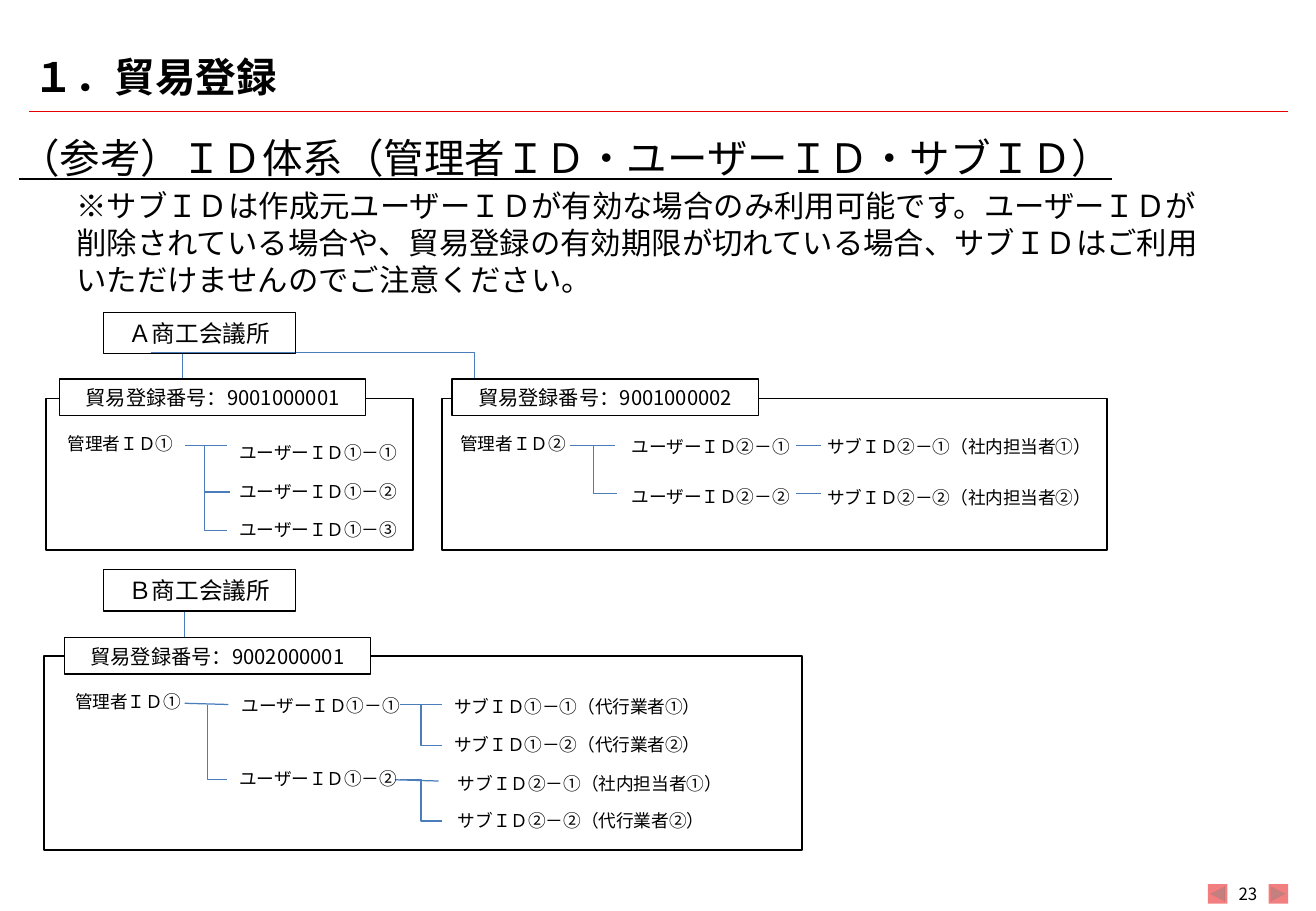
"""Builds the slide on the ID structure of trade registration."""
import lxml.etree
import pptx
import pptx.dml.color
import pptx.enum.shapes
import pptx.enum.text
import pptx.oxml.ns
import pptx.util
from pptx.util import Inches

BLACK = pptx.dml.color.RGBColor(0x00, 0x00, 0x00)
WHITE = pptx.dml.color.RGBColor(0xFF, 0xFF, 0xFF)
RED = pptx.dml.color.RGBColor(0xE6, 0x00, 0x00)
BLUE = pptx.dml.color.RGBColor(0x4A, 0x7D, 0xBA)
FONT = "Noto Sans CJK JP"
LINE_RATIO = 1.21
SHAPES = pptx.enum.shapes.MSO_SHAPE
ANCHOR = pptx.enum.text.MSO_ANCHOR
CENTER = pptx.enum.text.PP_ALIGN.CENTER

TITLE = "１．貿易登録"
HEADING = "（参考）ＩＤ体系（管理者ＩＤ・ユーザーＩＤ・サブＩＤ）"
NOTICE = (
    "※サブＩＤは作成元ユーザーＩＤが有効な場合のみ利用可能です。ユーザーＩＤが"
    "削除されている場合や、貿易登録の有効期限が切れている場合、サブＩＤはご利用"
    "いただけませんのでご注意ください。"
)
PAGE_NUMBER = "23"

CHAMBERS = [(0.85, 2.57, "Ａ商工会議所"), (0.85, 4.69, "Ｂ商工会議所")]
REGISTRATIONS = [
    (0.49, 3.12, "貿易登録番号：9001000001"),
    (3.72, 3.12, "貿易登録番号：9001000002"),
    (0.53, 5.25, "貿易登録番号：9002000001"),
]
FRAMES = [(0.36, 5.4, 6.24, 1.6), (3.64, 3.28, 5.47, 1.25), (0.38, 3.28, 3.02, 1.25)]

ADMIN_WIDTH, USER_WIDTH, SUB_WIDTH = 1.18, 1.81, 2.61
LABELS = [
    (0.46, 3.51, ADMIN_WIDTH, "管理者ＩＤ①"),
    (1.87, 3.59, USER_WIDTH, "ユーザーＩＤ①－①"),
    (1.87, 3.91, USER_WIDTH, "ユーザーＩＤ①－②"),
    (1.87, 4.22, USER_WIDTH, "ユーザーＩＤ①－③"),
    (3.69, 3.51, ADMIN_WIDTH, "管理者ＩＤ②"),
    (5.1, 3.54, USER_WIDTH, "ユーザーＩＤ②－①"),
    (5.1, 3.95, USER_WIDTH, "ユーザーＩＤ②－②"),
    (6.71, 3.54, SUB_WIDTH, "サブＩＤ②－①（社内担当者①）"),
    (6.71, 3.96, SUB_WIDTH, "サブＩＤ②－②（社内担当者②）"),
    (0.52, 5.64, ADMIN_WIDTH, "管理者ＩＤ①"),
    (1.89, 5.67, USER_WIDTH, "ユーザーＩＤ①－①"),
    (1.87, 6.27, USER_WIDTH, "ユーザーＩＤ①－②"),
    (3.64, 5.68, SUB_WIDTH, "サブＩＤ①－①（代行業者①）"),
    (3.64, 5.99, SUB_WIDTH, "サブＩＤ①－②（代行業者②）"),
    (3.67, 6.31, SUB_WIDTH, "サブＩＤ②－①（社内担当者①）"),
    (3.67, 6.62, SUB_WIDTH, "サブＩＤ②－②（代行業者②）"),
]

CHAMBER_LINKS = [
    (1.24, 2.9, 1.76, 3.12, 0.5),
    (1.24, 2.9, 4.99, 3.12, 0.71),
    (1.24, 5.03, 1.8, 5.25, 0.5),
]
BRANCHES = [
    (1.68, 3.67, 1.87, 4.37, 0),
    (4.69, 3.67, 5.08, 4.06, 0.5),
    (1.71, 5.8, 1.87, 6.42, 0),
    (3.29, 5.8, 3.64, 6.14, 0.5),
    (3.29, 6.42, 3.64, 6.76, 0.5),
]
STRAIGHT_LINKS = [
    (1.52, 3.67, 1.87, 3.67),
    (1.68, 4.05, 1.89, 4.05),
    (4.71, 3.67, 5.06, 3.67),
    (6.55, 3.67, 6.76, 3.67),
    (6.55, 4.06, 6.76, 4.06),
    (1.52, 5.79, 1.88, 5.8),
    (3.29, 5.8, 3.64, 5.8),
    (3.25, 6.42, 3.61, 6.43),
]
BUTTONS = [
    (9.94, SHAPES.ACTION_BUTTON_BACK_OR_PREVIOUS),
    (10.44, SHAPES.ACTION_BUTTON_FORWARD_OR_NEXT),
]


def add_child(parent, tag, **attributes):
    lxml.etree.SubElement(parent, pptx.oxml.ns.qn(tag), attributes)


def write(shape, text, size, anchor=ANCHOR.TOP, align=None, bold=False, underline=False, side=0.1):
    frame = shape.text_frame
    frame.text = text
    frame.word_wrap = True
    frame.vertical_anchor = anchor
    frame.margin_left = frame.margin_right = Inches(side)
    para = frame.paragraphs[0]
    para.alignment = align
    para.line_spacing = pptx.util.Pt(round(size * LINE_RATIO, 1))
    span = para.runs[0]
    span.font.size = pptx.util.Pt(size)
    span.font.bold = bold
    span.font.underline = underline
    span.font.color.rgb = BLACK
    span.font.name = FONT
    add_child(span.font._element, "a:ea", typeface=FONT)


def add_text(page, area, text, size, **style):
    write(page.shapes.add_textbox(*map(Inches, area)), text, size, **style)


def add_box(page, area, fill=None, weight=0.75):
    box = page.shapes.add_shape(SHAPES.RECTANGLE, *map(Inches, area))
    box.shadow.inherit = False
    if fill is None:
        box.fill.background()
    else:
        box.fill.solid()
        box.fill.fore_color.rgb = fill
    box.line.color.rgb = BLACK
    box.line.width = pptx.util.Pt(weight)
    return box


def add_link(page, ends, color=BLUE, bend=None):
    kinds = pptx.enum.shapes.MSO_CONNECTOR
    kind = kinds.STRAIGHT if bend is None else kinds.ELBOW
    link = page.shapes.add_connector(kind, *map(Inches, ends))
    link.line.color.rgb = color
    link.line.width = pptx.util.Pt(0.75)
    properties = link._element.spPr
    add_child(properties, "a:effectLst")
    if bend is not None:
        guides = properties.find(".//" + pptx.oxml.ns.qn("a:avLst"))
        add_child(guides, "a:gd", name="adj1", fmla=f"val {round(bend * 100000)}")


def add_button(page, left, kind):
    button = page.shapes.add_shape(kind, *map(Inches, (left, 7.28, 0.16, 0.16)))
    button.shadow.inherit = False
    button.fill.solid()
    button.fill.fore_color.rgb = RED
    button.line.fill.background()
    color = button._element.spPr.find(".//" + pptx.oxml.ns.qn("a:srgbClr"))
    add_child(color, "a:alpha", val="50000")


def main():
    deck = pptx.Presentation()
    deck.slide_width, deck.slide_height = Inches(10.83), Inches(7.5)
    page = deck.slides.add_slide(deck.slide_layouts[6])

    for left, kind in BUTTONS:
        add_button(page, left, kind)
    add_link(page, (0.24, 0.92, 10.6, 0.92), RED)
    for *ends, bend in CHAMBER_LINKS:
        add_link(page, ends, bend=bend)
    for area in FRAMES:
        add_box(page, area, weight=1)

    add_text(page, (0.18, 0.33, 10.27, 0.59), TITLE, 24, anchor=ANCHOR.MIDDLE, bold=True)
    add_text(page, (0.06, 1.04, 9.45, 0.51), HEADING, 24, underline=True)
    add_text(page, (0.53, 1.49, 9.45, 1.01), NOTICE, 18)
    add_text(page, (10.1, 7.28, 0.34, 0.16), PAGE_NUMBER, 10,
             anchor=ANCHOR.MIDDLE, align=CENTER, side=0)

    for left, top, name in CHAMBERS:
        write(add_box(page, (left, top, 1.58, 0.34)), name, 14, ANCHOR.MIDDLE, CENTER)
    for left, top, number in REGISTRATIONS:
        write(add_box(page, (left, top, 2.52, 0.3), WHITE), number, 12, ANCHOR.MIDDLE, CENTER)
    for *ends, bend in BRANCHES:
        add_link(page, ends, bend=bend)
    for ends in STRAIGHT_LINKS:
        add_link(page, ends)
    for left, top, width, text in LABELS:
        add_text(page, (left, top, width, 0.29), text, 10.5)

    deck.save("out.pptx")


if __name__ == "__main__":
    main()
